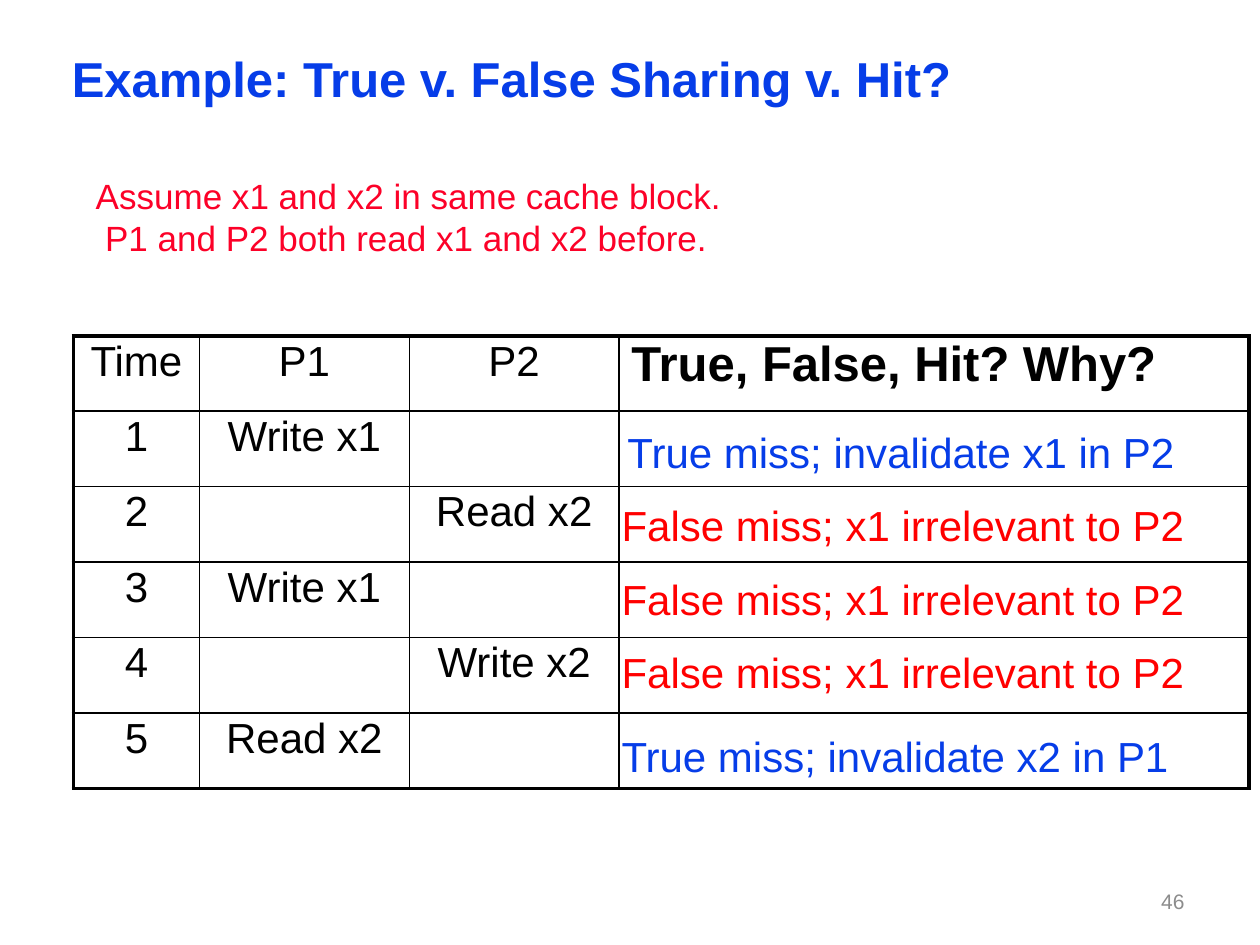
import pptx
import pptx.util
import pptx.dml.color
import pptx.enum.text
import pptx.oxml

Cm, Pt = pptx.util.Cm, pptx.util.Pt
ALIGN = pptx.enum.text.PP_ALIGN
ANCHOR = pptx.enum.text.MSO_ANCHOR

FONT = "Arial"
HUE = {"blue": "063DE8", "pink": "FC0128", "red": "FF0000",
       "black": "000000", "gray": "8C8C8C"}

TITLE = "Example: True v. False Sharing v. Hit?"
# line, indent in cm
NOTES = [("Assume x1 and x2 in same cache block.", 0.2),
         ("P1 and P2 both read x1 and x2 before.", 0.39)]
ROWS = [("Time", "P1", "P2", "True, False, Hit? Why?"),
        ("1", "Write x1", "", ""),
        ("2", "", "Read x2", ""),
        ("3", "Write x1", "", ""),
        ("4", "", "Write x2", ""),
        ("5", "Read x2", "", "")]
FALSE = "False miss; x1 irrelevant to P2"
# text, colour, left, top
REPLIES = [("True miss; invalidate x1 in P2", "blue", 12.4, 8.46),
           (FALSE, "red", 12.28, 9.95),
           (FALSE, "red", 12.28, 11.43),
           (FALSE, "red", 12.28, 12.91),
           ("True miss; invalidate x2 in P1", "blue", 12.28, 14.6)]
PAGE = "46"

LEFT, TOP, HIGH = 1.48, 6.77, 1.52
WIDE = [2.54, 4.23, 4.23, 12.7]
THIN, THICK = 1, 2.25
PADS = (0.25, 0.13, 0.25, 0)


def write(frame, lines, size=24, hue="black", bold=False, align=ALIGN.LEFT,
          space=None):
    """Fill a text frame with (text, indent) lines in one format."""
    for i, (text, indent) in enumerate(lines):
        para = frame.add_paragraph() if i else frame.paragraphs[0]
        para.alignment = align
        if space:
            para.line_spacing = space
        if indent:
            para._p.get_or_add_pPr().set("marL", str(Cm(indent)))
        run = para.add_run()
        run.text = text
        font = run.font
        font.name, font.size, font.bold = FONT, Pt(size), bold
        font.color.rgb = pptx.dml.color.RGBColor.from_string(HUE[hue])


def pad(part, pads):
    sides = ("left", "top", "right", "bottom")
    for side, gap in zip(sides, pads):
        setattr(part, "margin_" + side, Cm(gap))


def box(slide, place, lines, pads=PADS, wrap=True, anchor=ANCHOR.TOP, **form):
    frame = slide.shapes.add_textbox(*map(Cm, place)).text_frame
    frame.word_wrap = wrap
    frame.vertical_anchor = anchor
    pad(frame, pads)
    write(frame, lines, **form)


def edge(cell, side, width):
    """Draw one border of a cell; side is L, R, T or B."""
    space = pptx.oxml.ns.nsdecls("a")
    line = pptx.oxml.parse_xml(
        f'<a:ln{side} {space} w="{Pt(width)}"><a:solidFill>'
        f'<a:srgbClr val="{HUE["black"]}"/></a:solidFill></a:ln{side}>')
    cell._tc.get_or_add_tcPr().append(line)


def grid(slide):
    high, wide = len(ROWS), len(WIDE)
    place = map(Cm, (LEFT, TOP, sum(WIDE), HIGH * high))
    table = slide.shapes.add_table(high, wide, *place).table
    table.first_row = table.horz_banding = False
    for col, width in zip(table.columns, WIDE):
        col.width = Cm(width)
    for r, row in enumerate(ROWS):
        table.rows[r].height = Cm(HIGH)
        for c, text in enumerate(row):
            cell = table.cell(r, c)
            pad(cell, PADS)
            outer = {"L": c == 0, "R": c == wide - 1,
                     "T": r == 0, "B": r == high - 1}
            for side, rim in outer.items():
                edge(cell, side, THICK if rim else THIN)
            cell.fill.background()
            if text:
                last = c == wide - 1
                write(cell.text_frame, [(text, 0)], size=28 if last else 24,
                      bold=last, space=0.9,
                      align=ALIGN.LEFT if last else ALIGN.CENTER)


def main():
    deck = pptx.Presentation()
    deck.slide_width, deck.slide_height = Cm(25.4), Cm(19.05)
    slide = deck.slides.add_slide(deck.slide_layouts[6])
    box(slide, (1.27, 1.06, 21.3, 1.7), [(TITLE, 0)], size=28, hue="blue",
        bold=True, space=0.87, pads=(0.18, 0.08, 0.18, 0.08))
    grid(slide)
    box(slide, (18.2, 17.65, 5.93, 1.02), [(PAGE, 0)], size=12, hue="gray",
        align=ALIGN.RIGHT, anchor=ANCHOR.MIDDLE, pads=(0.25, 0.13, 0.25, 0.13))
    box(slide, (LEFT, 3.39, 19.05, 1.83), NOTES, size=20, hue="pink")
    for text, hue, left, top in REPLIES:
        width = 12.37 if hue == "blue" else 12.65
        box(slide, (left, top, width, 1.14), [(text, 0)], hue=hue, wrap=False)
    deck.save("out.pptx")


if __name__ == "__main__":
    main()
